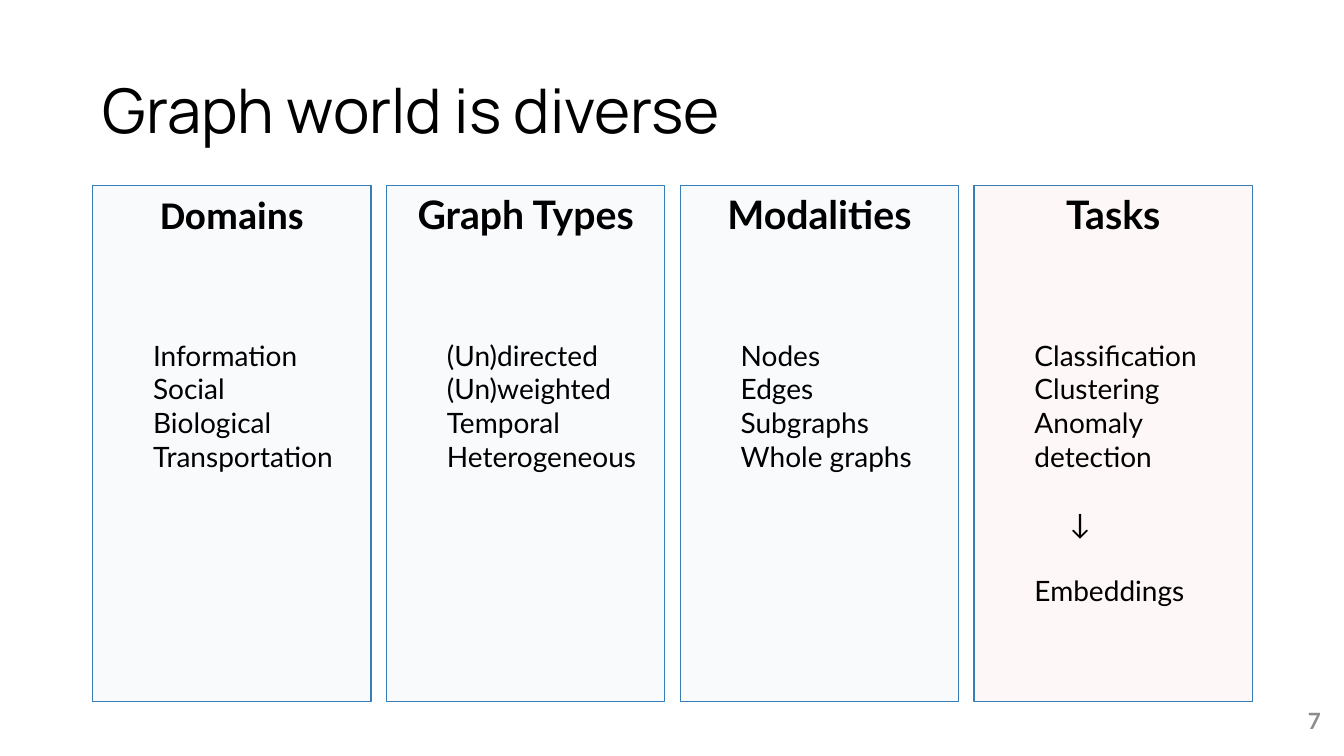
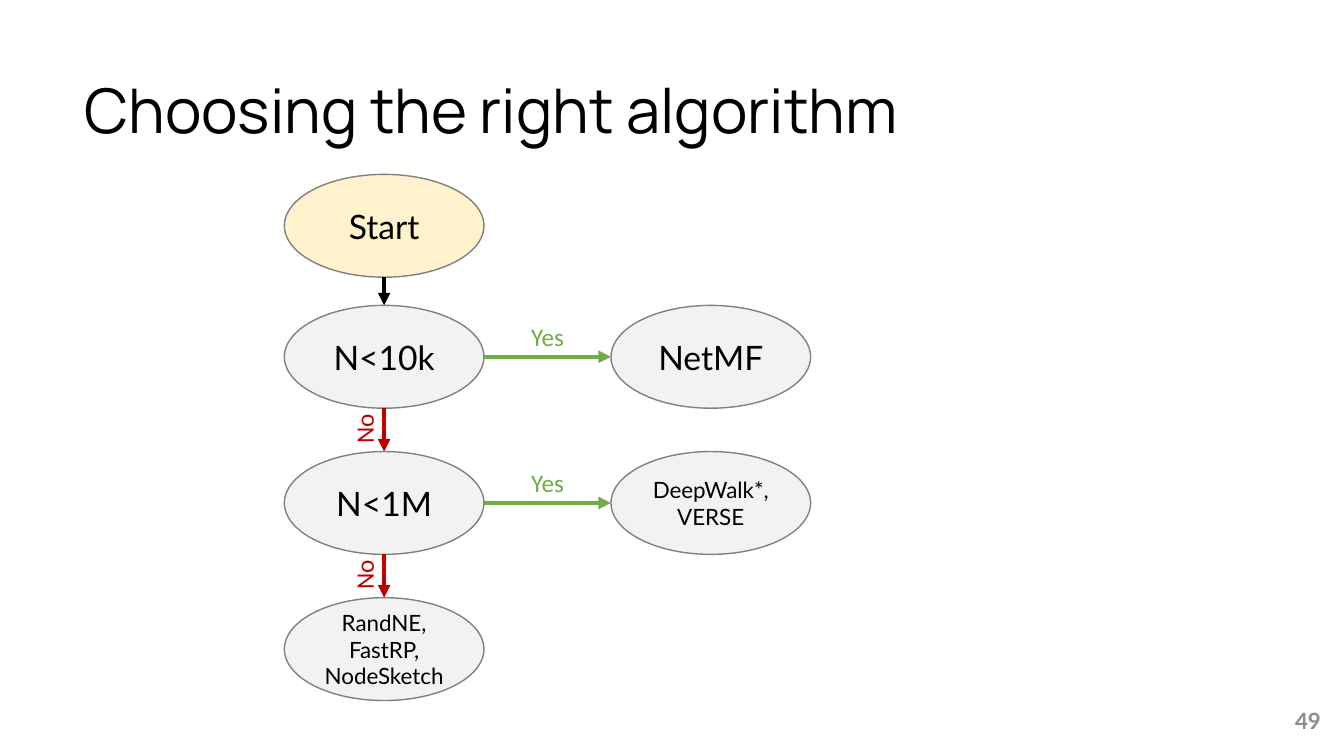
"""Build two slides: a panel overview of graph variety and an algorithm decision chart."""
from lxml.etree import SubElement
from pptx import Presentation
from pptx.dml.color import RGBColor
from pptx.enum.shapes import MSO_CONNECTOR, MSO_SHAPE
from pptx.enum.text import MSO_ANCHOR, MSO_AUTO_SIZE, PP_ALIGN
from pptx.oxml.ns import qn
from pptx.util import Inches, Pt

COLORS = {
    "black": "000000",
    "number": "8C8C8C",
    "blue": "377EB8",
    "red": "E41A1C",
    "node": "F2F2F2",
    "start": "FFF2CC",
    "outline": "808080",
    "yes": "70AD47",
    "no": "C00000",
}
TITLE_FONT, BODY_FONT, LABEL_FONT = "Manrope", "Lato", "Calibri"
PANEL_TOP, PANEL_WIDTH, PANEL_HEIGHT = 1.84, 2.76, 5.12
PANEL_LEFT, PANEL_STEP = 0.92, 2.914
NODE_WIDTH, NODE_HEIGHT = 1.98, 1.02


class Deck:
    def __init__(self):
        self.presentation = Presentation()
        self.presentation.slide_width = Inches(13.33)
        self.presentation.slide_height = Inches(7.5)
        self.slide = None

    def color(self, name):
        return RGBColor.from_string(COLORS[name])

    def format(self, paragraph, size, color="black", font=BODY_FONT, bold=False, align=PP_ALIGN.LEFT):
        paragraph.alignment = align
        for run in paragraph.runs:
            run.font.size = Pt(size)
            run.font.name = font
            run.font.bold = bold
            run.font.color.rgb = self.color(color)

    def add_slide(self, title, number, left, width):
        self.slide = self.presentation.slides.add_slide(self.presentation.slide_layouts[5])
        shape = self.slide.shapes.title
        shape.left, shape.top = Inches(left), Inches(0.4)
        shape.width, shape.height = Inches(width), Inches(1.45)
        frame = shape.text_frame
        frame.text = title
        frame.auto_size = MSO_AUTO_SIZE.NONE
        frame.vertical_anchor = MSO_ANCHOR.MIDDLE
        frame.paragraphs[0].line_spacing = 0.9
        self.format(frame.paragraphs[0], 44, font=TITLE_FONT)
        box = self.slide.shapes.add_textbox(Inches(10.2), Inches(6.95), Inches(3), Inches(0.4))
        box.text_frame.text = str(number)
        box.text_frame.word_wrap = True
        box.text_frame.vertical_anchor = MSO_ANCHOR.MIDDLE
        self.format(box.text_frame.paragraphs[0], 16, "number", bold=True, align=PP_ALIGN.RIGHT)

    def shape(self, kind, left, top, width, height, fill, line):
        shape = self.slide.shapes.add_shape(kind, Inches(left), Inches(top), Inches(width), Inches(height))
        shape.shadow.inherit = False
        shape.fill.solid()
        shape.fill.fore_color.rgb = self.color(fill)
        shape.line.color.rgb = self.color(line)
        shape.line.width = Pt(1)
        return shape

    def panel(self, left, heading, items, fill="blue", font=BODY_FONT):
        shape = self.shape(MSO_SHAPE.RECTANGLE, left, PANEL_TOP, PANEL_WIDTH, PANEL_HEIGHT, fill, "blue")
        fill_color = shape.element.spPr.find(qn("a:solidFill")).find(qn("a:srgbClr"))
        SubElement(fill_color, qn("a:alpha"), val="3000")
        frame = shape.text_frame
        frame.vertical_anchor = MSO_ANCHOR.TOP
        frame.text = heading
        self.format(frame.paragraphs[0], 28, font=font, bold=True, align=PP_ALIGN.CENTER)
        for index, item in enumerate(items):
            self.panel_item(frame, item, 72 if index == 0 else 0)

    def panel_item(self, frame, text, space_before=0, indent=0.5):
        paragraph = frame.add_paragraph()
        paragraph.text = text
        paragraph.space_before = Pt(space_before)
        self.format(paragraph, 20)
        paragraph._p.get_or_add_pPr().set("marL", str(Inches(indent)))
        return paragraph

    def node(self, left, top, text, size=24, fill="node"):
        shape = self.shape(MSO_SHAPE.OVAL, left, top, NODE_WIDTH, NODE_HEIGHT, fill, "outline")
        shape.text_frame.text = text
        shape.text_frame.vertical_anchor = MSO_ANCHOR.MIDDLE
        self.format(shape.text_frame.paragraphs[0], size, align=PP_ALIGN.CENTER)

    def arrow(self, start, end, color):
        points = [Inches(value) for value in (*start, *end)]
        connector = self.slide.shapes.add_connector(MSO_CONNECTOR.STRAIGHT, *points)
        connector.line.color.rgb = self.color(color)
        connector.line.width = Pt(3)
        properties = connector.element.spPr
        SubElement(properties.find(qn("a:ln")), qn("a:tailEnd"), type="triangle")
        SubElement(properties, qn("a:effectLst"))

    def label(self, left, top, width, text, color, rotation=0):
        box = self.slide.shapes.add_textbox(Inches(left), Inches(top), Inches(width), Inches(0.4))
        box.rotation = rotation
        box.text_frame.text = text
        box.text_frame.word_wrap = False
        self.format(box.text_frame.paragraphs[0], 18, color, LABEL_FONT)


def add_diversity_slide(deck):
    deck.add_slide("Graph world is diverse", 7, 0.92, 11.5)
    panels = [
        ("Domains", ["Information", "Social", "Biological", "Transportation"], "blue", LABEL_FONT),
        ("Graph Types", ["(Un)directed", "(Un)weighted", "Temporal", "Heterogeneous"], "blue", BODY_FONT),
        ("Modalities", ["Nodes", "Edges", "Subgraphs", "Whole graphs"], "blue", BODY_FONT),
        ("Tasks", ["Classification", "Clustering", "Anomaly detection"], "red", BODY_FONT),
    ]
    for column, panel in enumerate(panels):
        deck.panel(PANEL_LEFT + column * PANEL_STEP, *panel)
    tasks_frame = deck.slide.shapes[-1].text_frame
    deck.panel_item(tasks_frame, "↓", 24, 0.85)
    deck.panel_item(tasks_frame, "Embeddings", 24)


def add_algorithm_slide(deck):
    deck.add_slide("Choosing the right algorithm", 49, 0.74, 11.59)
    question_left, answer_left = 2.82, 6.06
    center = question_left + NODE_WIDTH / 2
    start_top, small_top, medium_top, large_top = 1.73, 3.03, 4.48, 5.93
    deck.node(question_left, start_top, "Start", fill="start")
    deck.arrow((center, start_top + NODE_HEIGHT), (center, small_top), "black")
    decisions = [
        (small_top, medium_top, "N<10k", "NetMF", 24),
        (medium_top, large_top, "N<1M", "DeepWalk*, VERSE", 16),
    ]
    for top, next_top, question, answer, size in decisions:
        middle, bottom = top + NODE_HEIGHT / 2, top + NODE_HEIGHT
        deck.node(question_left, top, question)
        deck.node(answer_left, top, answer, size)
        deck.arrow((question_left + NODE_WIDTH, middle), (answer_left, middle), "yes")
        deck.label(5.17, top + 0.11, 0.53, "Yes", "yes")
        deck.arrow((center, bottom), (center, next_top), "no")
        deck.label(3.36, bottom, 0.5, "No", "no", 270)
    deck.node(question_left, large_top, "RandNE, FastRP, NodeSketch", 16)


def main():
    deck = Deck()
    add_diversity_slide(deck)
    add_algorithm_slide(deck)
    deck.presentation.save("out.pptx")


if __name__ == "__main__":
    main()
